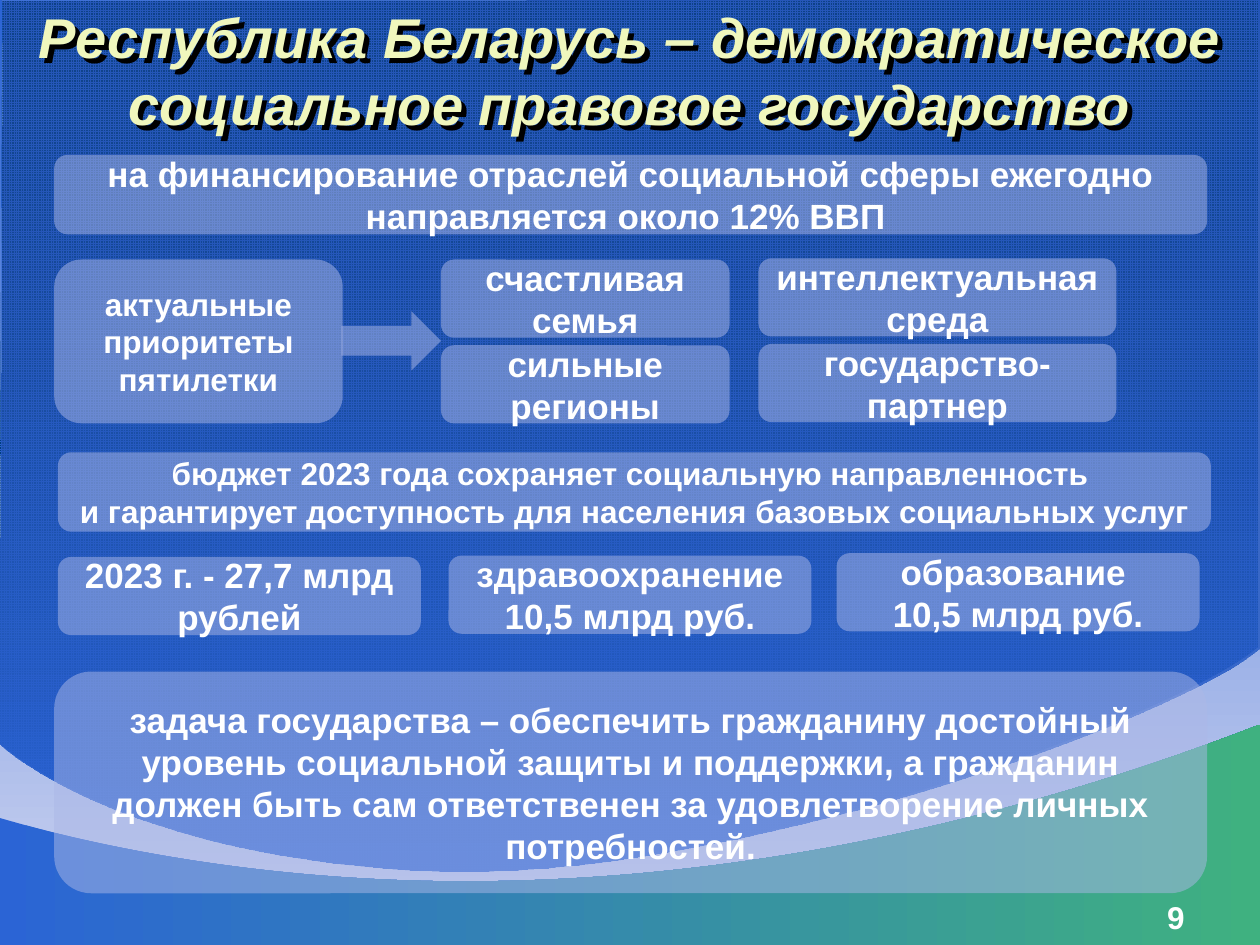
from pptx import Presentation, util as u
from pptx.dml.color import RGBColor
from pptx.enum import dml, shapes, text
from pptx.oxml import parse_xml
from pptx.oxml.ns import nsdecls, qn
from lxml import etree

BLUE = RGBColor(0x2B, 0x64, 0xD5)
NAVY = RGBColor(0x00, 0x3D, 0x7B)
DUSK = RGBColor(0x1F, 0x48, 0x98)
PALE = RGBColor(0xCE, 0xD4, 0xF0)
GREEN = RGBColor(0x3F, 0xB1, 0x80)
LILAC = RGBColor(0xAC, 0xB8, 0xE7)
CREAM = RGBColor(0xF0, 0xF7, 0xBD)
WHITE = RGBColor(0xFF, 0xFF, 0xFF)
W, H = 10, 7.5

TITLE = "Республика Беларусь – демократическое социальное правовое государство"
PAGE = "9"

# Full-width banners: left, top, height, size, text
BANNERS = [
    (0.43, 1.23, 0.63, 20, "на финансирование отраслей социальной сферы ежегодно "
                           "направляется около 12% ВВП "),
    (0.46, 3.59, 0.63, 18, "бюджет 2023 года сохраняет социальную направленность \n"
                           "и гарантирует доступность для населения базовых социальных услуг"),
    (0.43, 5.33, 1.76, 20, "задача государства – обеспечить гражданину достойный уровень "
                           "социальной защиты и поддержки, а гражданин должен быть сам "
                           "ответственен за удовлетворение личных потребностей."),
]
BANNER_W = 9.15
CARD_H = 0.62

# Priorities: left, top, width, cards from top to bottom
PRIORITY = "актуальные приоритеты пятилетки"
PRIORITY_COLS = [
    (3.5, 2.06, 2.29, ["счастливая семья", "сильные регионы"]),
    (6.02, 2.05, 2.84, ["интеллектуальная среда", "государство-партнер"]),
]
PRIORITY_PITCH = 0.68

# Budget cards: left, top, text
BUDGET = [
    (0.46, 4.42, "2023 г. - 27,7 млрд рублей"),
    (3.56, 4.41, "здравоохранение 10,5 млрд руб."),
    (6.64, 4.39, "образование \n10,5 млрд руб."),
]
BUDGET_W = 2.88

# Waves: start point, Bezier curves (two controls, end), straight corners
SKY = ((0, 5.9),
       [((0.12, 6.02), (1.12, 6.81), (3.43, 6.91)),
        ((5.75, 7.01), (9.36, 5.7), (10, 5.14))],
       [(10, -0.01), (0.02, 0.01), (0.03, 0.02)])
GROUND = ((-0.01, 6.49),
          [((0.11, 6.52), (1.29, 6.9), (3.05, 6.98)),
           ((4.81, 7.06), (7.22, 6.83), (10, 5.75))],
          [(10, 7.5), (-0.03, 7.5)])


def set_alpha(fill_el, percent):
    color = next(fill_el.iter(qn("a:srgbClr")))
    etree.SubElement(color, qn("a:alpha")).set("val", str(percent * 1000))


def set_gradient(fill, first, last, angle):
    fill.gradient()
    fill.gradient_angle = -angle % 360
    for stop, color, pos in zip(fill.gradient_stops, (first, last), (0, 1)):
        stop.color.rgb = color
        stop.position = pos


def wave(s, outline, dx=0, dy=0):
    def emu(pt):
        return u.Inches(pt[0] + dx), u.Inches(pt[1] + dy)

    start, curves, corners = outline
    pts = [emu(pt) for pt in [start] + [c[2] for c in curves] + corners]
    fb = s.shapes.build_freeform(*pts[0])
    fb.add_line_segments(pts[1:], close=True)
    sp = fb.convert_to_shape()
    sp.shadow.inherit = False
    sp.line.fill.background()
    # Bend the first segments into curves
    left, top = (min(axis) for axis in zip(*pts))
    segments = list(sp._element.iter(qn("a:lnTo")))
    for seg, (c1, c2, _) in zip(segments, curves):
        seg.tag = qn("a:cubicBezTo")
        for i, (x, y) in enumerate(map(emu, (c1, c2))):
            pt = etree.Element(qn("a:pt"), x=str(x - left), y=str(y - top))
            seg.insert(i, pt)
    return sp


def write(tf, words, size, color=WHITE, align=text.PP_ALIGN.CENTER):
    tf.word_wrap = True
    tf.auto_size = text.MSO_AUTO_SIZE.NONE
    p = tf.paragraphs[0]
    p.alignment = align
    runs = []
    for i, line in enumerate(words.split("\n")):
        if i:
            p.add_line_break()
        r = p.add_run()
        r.text = line
        r.font.name, r.font.size, r.font.bold = "Arial", u.Pt(size), True
        r.font.color.rgb = color
        runs.append(r)
    return runs


def panel(s, x, y, w, h, words="", size=20, kind=shapes.MSO_SHAPE.ROUNDED_RECTANGLE):
    sp = s.shapes.add_shape(kind, *map(u.Inches, (x, y, w, h)))
    sp.shadow.inherit = False
    sp.line.fill.background()
    sp.fill.solid()
    sp.fill.fore_color.rgb = LILAC
    set_alpha(sp._element.spPr, 50)
    if words:
        sp.text_frame.vertical_anchor = text.MSO_ANCHOR.MIDDLE
        write(sp.text_frame, words, size)


def main():
    prs = Presentation()
    prs.slide_width, prs.slide_height = u.Inches(W), u.Inches(H)
    s = prs.slides.add_slide(prs.slide_layouts[5])

    # Background and waves
    set_gradient(s.background.fill, BLUE, PALE, 90)
    grid = wave(s, SKY, -0.01, -0.01)
    grid.fill.patterned()
    grid.fill.pattern = dml.MSO_PATTERN.SMALL_GRID
    grid.fill.fore_color.rgb, grid.fill.back_color.rgb = BLUE, NAVY
    sky = wave(s, SKY)
    set_gradient(sky.fill, DUSK, BLUE, 90)
    set_alpha(sky._element.spPr, 46)
    set_gradient(wave(s, GROUND).fill, BLUE, GREEN, 0)

    # Title, in front of the waves, with a hard shadow
    title = s.shapes.title
    title._element.getparent().append(title._element)
    title.left, title.top, title.width, title.height = map(u.Inches, (0, 0.08, W, 0.95))
    title.text_frame.vertical_anchor = text.MSO_ANCHOR.MIDDLE
    r = write(title.text_frame, TITLE, 32, CREAM)[0]
    r.font.italic = True
    title.fill.background()
    title._element.spPr.append(parse_xml(
        f'<a:effectLst {nsdecls("a")}><a:outerShdw dist="50800" dir="2700000">'
        '<a:srgbClr val="000000"/></a:outerShdw></a:effectLst>'))

    # Page number
    tb = s.shapes.add_textbox(*map(u.Inches, (7.17, 7.08, 2.33, 0.27)))
    write(tb.text_frame, PAGE, 18, align=text.PP_ALIGN.RIGHT)

    # Banners
    for x, y, h, size, words in BANNERS:
        panel(s, x, y, BANNER_W, h, words, size)

    # Priorities with the arrow to their cards
    panel(s, 0.43, 2.06, 2.29, 1.3, PRIORITY, 18)
    panel(s, 2.71, 2.47, 0.79, 0.47, kind=shapes.MSO_SHAPE.RIGHT_ARROW)
    for x, y, w, cards in PRIORITY_COLS:
        for row, words in enumerate(cards):
            panel(s, x, y + row * PRIORITY_PITCH, w, CARD_H, words)

    # Budget
    for x, y, words in BUDGET:
        panel(s, x, y, BUDGET_W, CARD_H, words)

    prs.save("out.pptx")


if __name__ == "__main__":
    main()
